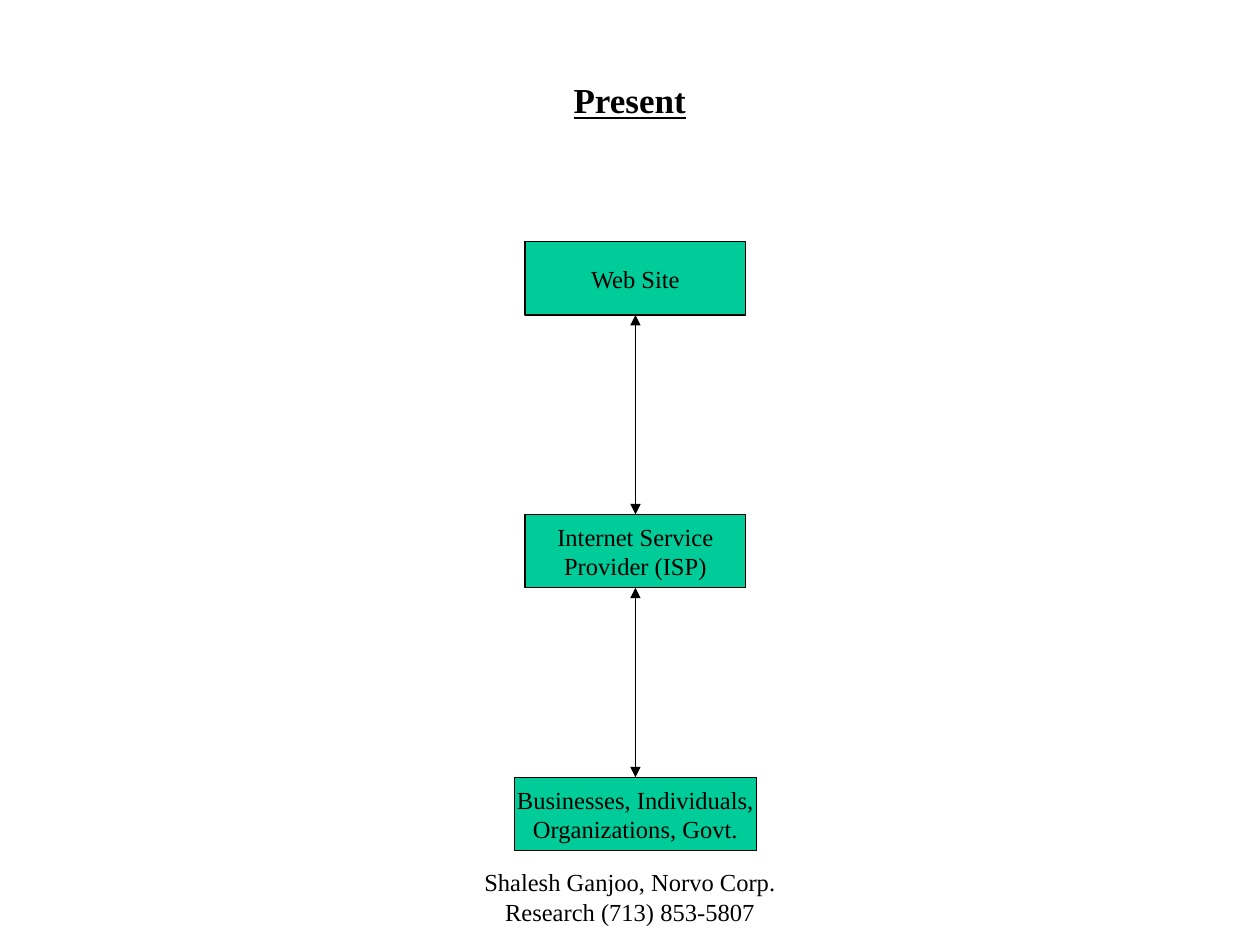
from lxml.etree import SubElement
from pptx import Presentation
from pptx.dml.color import RGBColor
from pptx.enum.shapes import MSO_CONNECTOR, MSO_SHAPE
from pptx.enum.text import MSO_ANCHOR, MSO_AUTO_SIZE, PP_ALIGN
from pptx.oxml.ns import qn
from pptx.util import Cm, Pt

GREEN = RGBColor(0x00, 0xCC, 0x99)
BLACK = RGBColor(0x00, 0x00, 0x00)
FONT = "Times New Roman"
LINE_WIDTH = Pt(0.75)

CHAIN_CENTER = 12.81
BOX_HEIGHT = 1.48
BOTTOM, TOP = 2, 0
# Each stage: top and width in cm, then its lines of text
STAGES = [
    (4.87, 4.45, ["Web Site"]),
    (10.37, 4.45, ["Internet Service", "Provider (ISP)"]),
    (15.67, 4.87, ["Businesses, Individuals,", "Organizations, Govt."]),
]


def write_lines(frame, lines, size=14, bold=False, underline=False):
    for index, line in enumerate(lines):
        paragraph = frame.add_paragraph() if index else frame.paragraphs[0]
        paragraph.alignment = PP_ALIGN.CENTER
        run = paragraph.add_run()
        run.text = line
        font = run.font
        font.name, font.size = FONT, Pt(size)
        font.bold, font.underline = bold, underline
        font.color.rgb = BLACK


def set_title(slide, text):
    title = slide.shapes.title
    title.left, title.top = Cm(1.9), Cm(0.42)
    title.width, title.height = Cm(21.59), Cm(3.18)
    frame = title.text_frame
    frame.auto_size = MSO_AUTO_SIZE.NONE
    frame.vertical_anchor = MSO_ANCHOR.MIDDLE
    write_lines(frame, [text], size=20, bold=True, underline=True)


def add_stage(slide, top, width, lines):
    box = slide.shapes.add_shape(
        MSO_SHAPE.RECTANGLE, Cm(CHAIN_CENTER - width / 2), Cm(top),
        Cm(width), Cm(BOX_HEIGHT))
    box.shadow.inherit = False
    box.fill.solid()
    box.fill.fore_color.rgb = GREEN
    box.line.color.rgb = BLACK
    box.line.width = LINE_WIDTH
    box.text_frame.word_wrap = False
    box.text_frame.vertical_anchor = MSO_ANCHOR.MIDDLE
    write_lines(box.text_frame, lines)
    return box


def add_two_way_arrow(slide, upper, lower):
    arrow = slide.shapes.add_connector(MSO_CONNECTOR.STRAIGHT, 0, 0, 0, 0)
    arrow.begin_connect(upper, BOTTOM)
    arrow.end_connect(lower, TOP)
    arrow.line.color.rgb = BLACK
    arrow.line.width = LINE_WIDTH
    line = arrow.line._get_or_add_ln()
    for end in ("a:headEnd", "a:tailEnd"):
        SubElement(line, qn(end), type="triangle")
    SubElement(arrow._element.spPr, qn("a:effectLst"))


def add_contact(slide, text):
    contact = slide.shapes.add_textbox(Cm(8.68), Cm(17.36), Cm(8.04), Cm(1.27))
    contact.text_frame.word_wrap = True
    write_lines(contact.text_frame, [text])


def main():
    presentation = Presentation()
    presentation.slide_width, presentation.slide_height = Cm(25.4), Cm(19.05)
    slide = presentation.slides.add_slide(presentation.slide_layouts[5])

    set_title(slide, "Present")
    boxes = [add_stage(slide, *stage) for stage in STAGES]
    for upper, lower in zip(boxes, boxes[1:]):
        add_two_way_arrow(slide, upper, lower)
    add_contact(slide, "Shalesh Ganjoo, Norvo Corp. Research (713) 853-5807")

    presentation.save("out.pptx")


if __name__ == "__main__":
    main()
